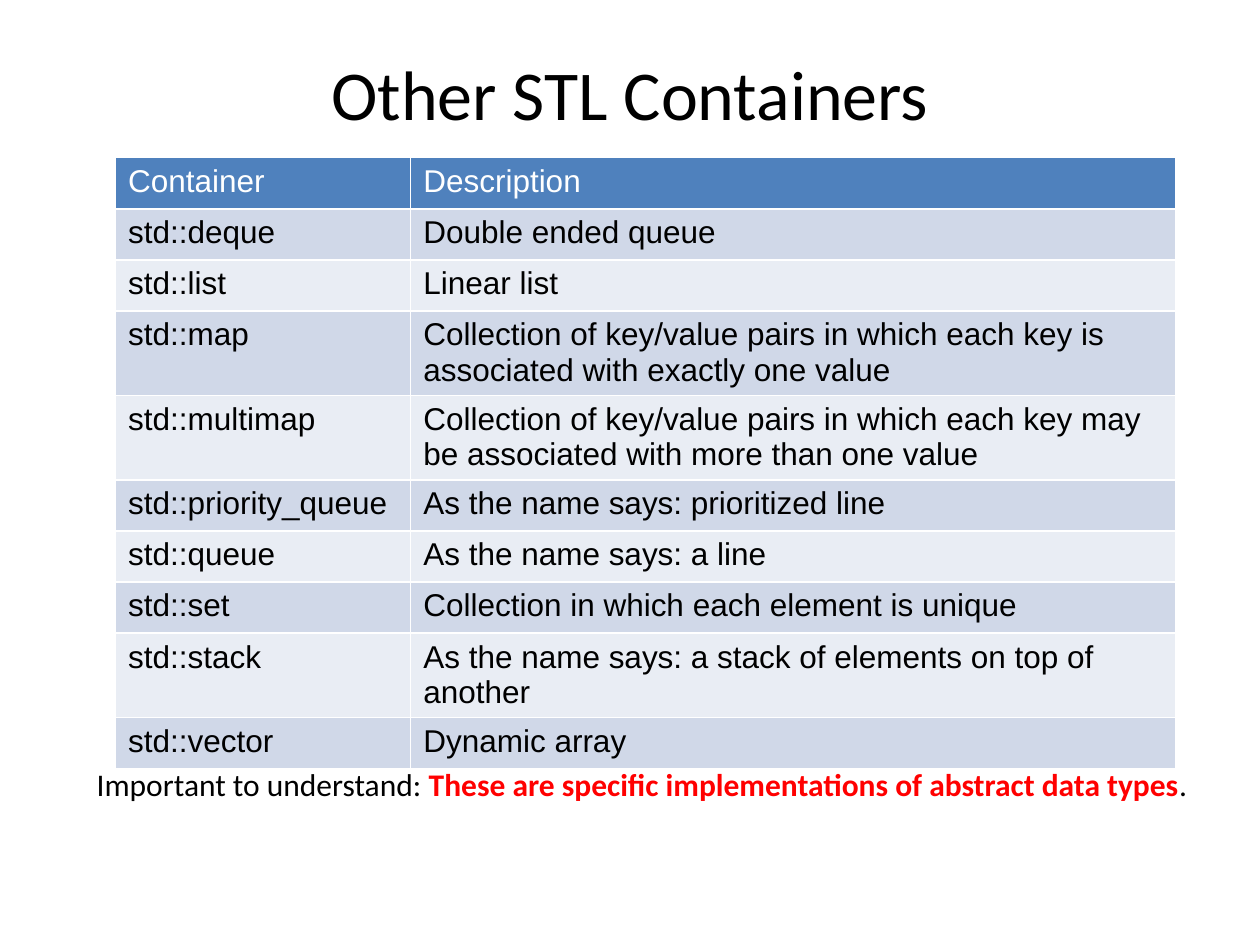
from pptx import Presentation
from pptx import util as u
from pptx.dml import color
from pptx.enum import text

COLORS = {
    "black": "000000",
    "white": "FFFFFF",
    "red": "FF0000",
    "header": "4F81BD",
    "odd": "D0D8E8",
    "even": "E9EDF4",
}

ROWS = [
    ("Container", "Description"),
    ("std::deque", "Double ended queue"),
    ("std::list", "Linear list"),
    ("std::map", "Collection of key/value pairs in which each key is associated with exactly one value"),
    ("std::multimap", "Collection of key/value pairs in which each key may be associated with more than one value"),
    ("std::priority_queue", "As the name says: prioritized line"),
    ("std::queue", "As the name says: a line"),
    ("std::set", "Collection in which each element is unique"),
    ("std::stack", "As the name says: a stack of elements on top of another"),
    ("std::vector", "Dynamic array"),
]
LINE_LIMIT = 50


def add_run(paragraph, wording, font, size, shade, bold=False):
    run = paragraph.add_run()
    run.text = wording
    run.font.name = font
    run.font.size = u.Pt(size)
    run.font.bold = bold
    run.font.color.rgb = color.RGBColor.from_string(COLORS[shade])


presentation = Presentation()
presentation.slide_width = u.Cm(25.4)
presentation.slide_height = u.Cm(19.05)
slide = presentation.slides.add_slide(presentation.slide_layouts[6])

title = slide.shapes.add_textbox(u.Cm(1.27), u.Cm(0.76), u.Cm(22.86), u.Cm(2.21))
title.text_frame.word_wrap = True
title.text_frame.vertical_anchor = text.MSO_ANCHOR.MIDDLE
paragraph = title.text_frame.paragraphs[0]
paragraph.alignment = text.PP_ALIGN.CENTER
add_run(paragraph, "Other STL Containers", "Calibri", 40, "black")

row_heights = [
    u.Cm(1.68) if len(description) > LINE_LIMIT else u.Cm(1.03)
    for _, description in ROWS
]
table = slide.shapes.add_table(
    len(ROWS), 2, u.Cm(2.33), u.Cm(3.18), u.Cm(21.37), sum(row_heights)
).table
table.columns[0].width = u.Cm(5.95)
table.columns[1].width = u.Cm(15.42)

for row_index, wordings in enumerate(ROWS):
    table.rows[row_index].height = row_heights[row_index]
    is_header = row_index == 0
    fill = "header" if is_header else ("even", "odd")[row_index % 2]
    for column_index, wording in enumerate(wordings):
        cell = table.cell(row_index, column_index)
        cell.margin_bottom = u.Cm(0.05)
        cell.fill.solid()
        cell.fill.fore_color.rgb = color.RGBColor.from_string(COLORS[fill])
        shade = "white" if is_header else "black"
        add_run(cell.text_frame.paragraphs[0], wording, "Arial", 18, shade)

note = slide.shapes.add_textbox(u.Cm(1.7), u.Cm(15.29), u.Cm(22.68), u.Cm(1.02))
note.text_frame.word_wrap = False
note.text_frame.auto_size = text.MSO_AUTO_SIZE.SHAPE_TO_FIT_TEXT
paragraph = note.text_frame.paragraphs[0]
for wording, shade, bold in [
    ("Important to understand: ", "black", False),
    ("These are specific implementations of abstract data types", "red", True),
    (".", "black", False),
]:
    add_run(paragraph, wording, "Calibri", 18, shade, bold)

presentation.save("out.pptx")
